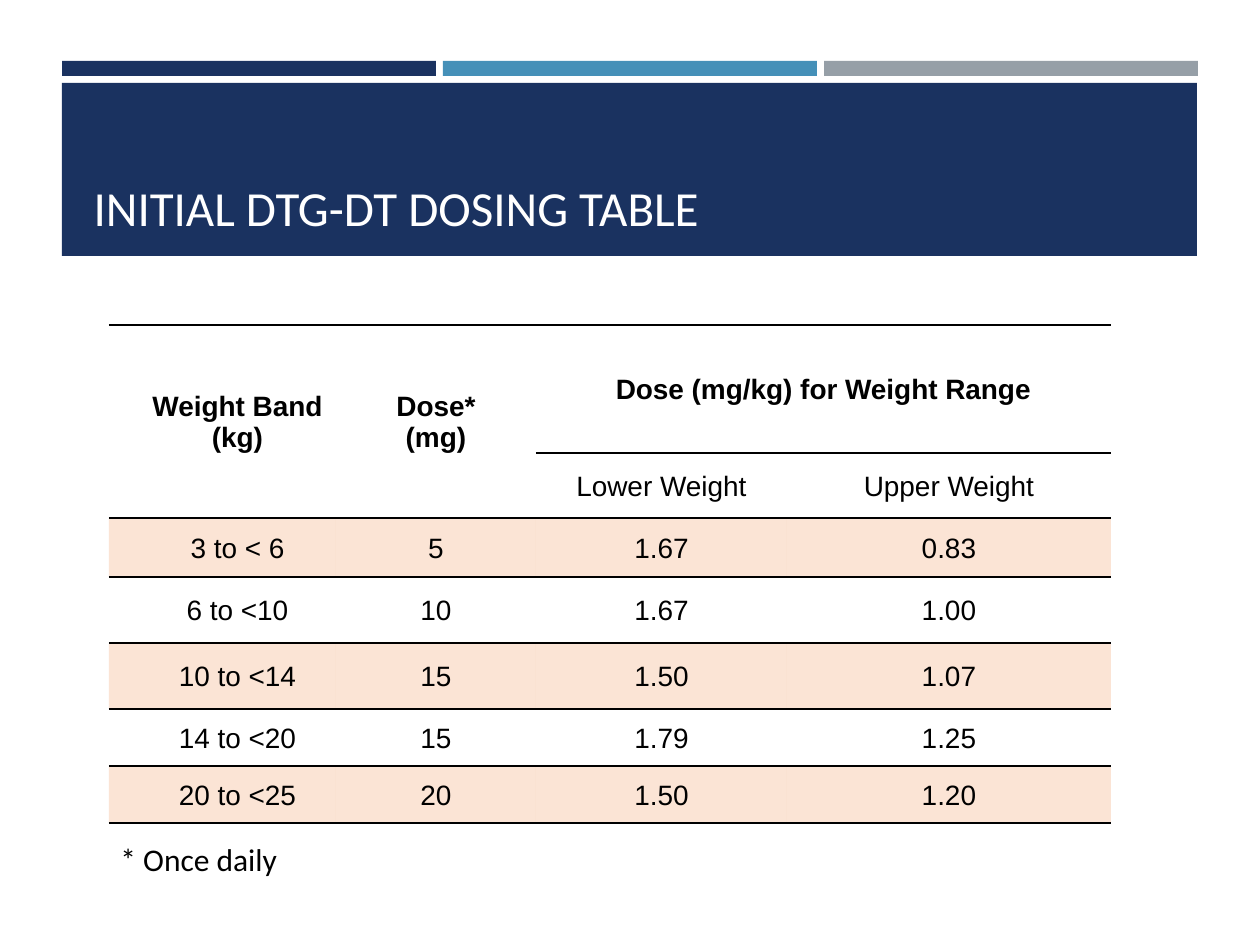
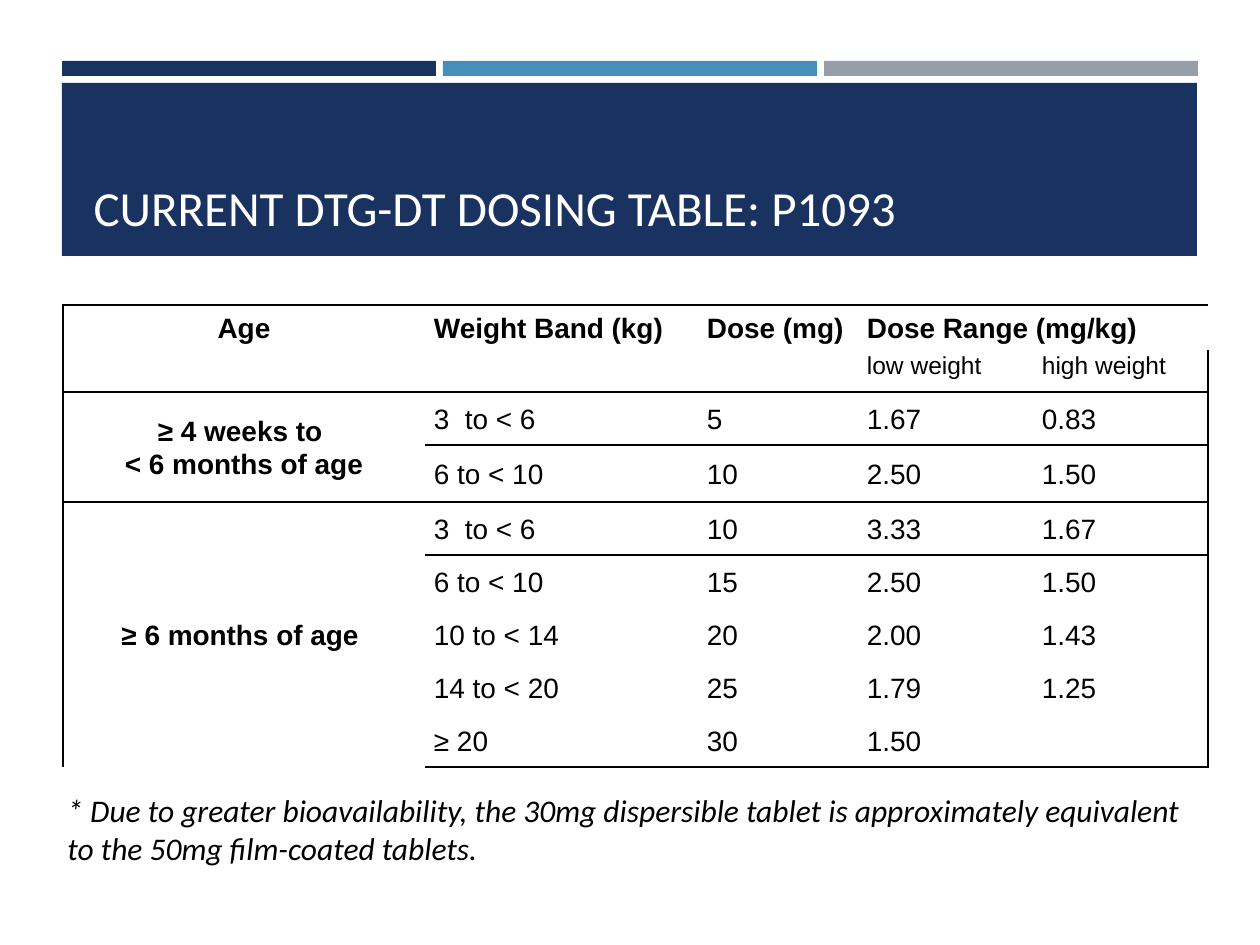
from dataclasses import dataclass

from lxml.etree import SubElement
from pptx import Presentation
from pptx.dml.color import RGBColor as Rgb
from pptx.enum.shapes import MSO_SHAPE as Preset
from pptx.enum.text import MSO_ANCHOR as Anchor, PP_ALIGN as Align
from pptx.oxml.ns import qn
from pptx.presentation import Presentation as Deck
from pptx.slide import Slide, SlideLayout
from pptx.table import Table, _Cell as Cell
from pptx.text.text import TextFrame
from pptx.util import Emu, Pt

PX = 914400 / 126
TITLE_ONLY = 5
PLAIN_TABLE_STYLE = "{2D5ABB26-0587-4C30-8999-92F81FD0307C}"


@dataclass(frozen=True)
class Theme:
    navy: str = "1A3260"
    blue: str = "4590B8"
    grey: str = "969FA7"
    white: str = "FFFFFF"
    black: str = "000000"
    peach: str = "F8CBAD"
    peach_opacity: int = 50
    heading_font: str = "Calibri"
    table_font: str = "Arial"
    title_size: int = 28
    note_size: int = 18
    table_size: int = 16
    small_size: int = 14
    rule_width: int = 1


THEME = Theme()


@dataclass(frozen=True)
class Box:
    left: int
    top: int
    width: int
    height: int

    def emu(self) -> tuple[Emu, Emu, Emu, Emu]:
        return px(self.left), px(self.top), px(self.width), px(self.height)


@dataclass(frozen=True)
class TextStyle:
    font: str
    size: int
    color: str = THEME.black
    bold: bool = False
    italic: bool = False
    align: Align = Align.LEFT
    line_spacing: float | None = None


@dataclass(frozen=True)
class Rule:
    """A horizontal line above a row, from a first column to the right edge."""
    row: int
    first_column: int = 0


@dataclass(frozen=True)
class DosingTable:
    left: int
    top: int
    columns: list[int]
    rows: list[int]
    cells: list[list[str]]
    merges: list[tuple[int, int, int, int]]
    rules: list[Rule]
    centred_columns: set[int]
    bold_columns: set[int]
    shaded_rows: set[int]
    small_rows: set[int]
    side_margin: int
    top_margin: int
    first_indent: int
    boxed: bool
    line_spacing: float | None


@dataclass(frozen=True)
class DosingSlide:
    title: str
    table: DosingTable
    note: str
    note_box: Box
    note_italic: bool


BANNER = Box(62, 83, 1135, 173)
TITLE_BOX = Box(81, 95, 1101, 148)
STRIPE = Box(62, 61, 374, 15)
STRIPE_STEP = 381

INITIAL_DOSING = DosingSlide(
    title="INITIAL DTG-DT DOSING TABLE",
    table=DosingTable(
        left=109, top=325,
        columns=[227, 200, 251, 324],
        rows=[128, 65, 59, 66, 66, 57, 57],
        cells=[
            ["Weight Band\n(kg)", "Dose*\n(mg)", "Dose (mg/kg) for Weight Range", ""],
            ["", "", "Lower Weight", "Upper Weight"],
            ["3 to < 6", "5", "1.67", "0.83"],
            ["6 to <10", "10", "1.67", "1.00"],
            ["10 to <14", "15", "1.50", "1.07"],
            ["14 to <20", "15", "1.79", "1.25"],
            ["20 to <25", "20", "1.50", "1.20"],
        ],
        merges=[(0, 0, 1, 0), (0, 1, 1, 1), (0, 2, 0, 3)],
        rules=[Rule(0), Rule(1, first_column=2)] + [Rule(row) for row in range(2, 8)],
        centred_columns={0, 1, 2, 3},
        bold_columns=set(),
        shaded_rows={2, 4, 6},
        small_rows=set(),
        side_margin=2, top_margin=2, first_indent=32,
        boxed=False,
        line_spacing=None,
    ),
    note="* Once daily",
    note_box=Box(108, 834, 399, 50),
    note_italic=False,
)

CURRENT_DOSING = DosingSlide(
    title="CURRENT DTG-DT DOSING TABLE: P1093",
    table=DosingTable(
        left=63, top=305,
        columns=[362, 273, 160, 175, 175],
        rows=[45, 42, 53, 57] + [53] * 5,
        cells=[
            ["Age", "Weight Band (kg)", "Dose (mg)", "Dose Range (mg/kg)", ""],
            ["", "", "", "low weight", "high weight"],
            ["≥ 4 weeks to \n< 6 months of age", "3  to < 6", "5", "1.67", "0.83"],
            ["", "6 to < 10", "10", "2.50", "1.50"],
            ["≥ 6 months of age ", "3  to < 6", "10", "3.33", "1.67"],
            ["", "6 to < 10", "15", "2.50", "1.50"],
            ["", "10 to < 14", "20", "2.00", "1.43"],
            ["", "14 to < 20", "25", "1.79", "1.25"],
            ["", "≥ 20", "30", "1.50", ""],
        ],
        merges=[(0, 3, 0, 4), (2, 0, 3, 0), (4, 0, 8, 0)],
        rules=[Rule(0), Rule(2), Rule(4), Rule(9)],
        centred_columns={0},
        bold_columns={0},
        shaded_rows=set(),
        small_rows={1},
        side_margin=9, top_margin=0, first_indent=9,
        boxed=True,
        line_spacing=1.07,
    ),
    note="* Due to greater bioavailability, the 30mg dispersible tablet is "
         "approximately equivalent to the 50mg film-coated tablets.",
    note_box=Box(55, 785, 1153, 89),
    note_italic=True,
)


def px(length: int) -> Emu:
    return Emu(round(length * PX))


def write_text(frame: TextFrame, text: str, style: TextStyle) -> None:
    for index, line in enumerate(text.split("\n")):
        paragraph = frame.add_paragraph() if index else frame.paragraphs[0]
        paragraph.alignment = style.align
        if style.line_spacing:
            paragraph.line_spacing = style.line_spacing
        run = paragraph.add_run()
        run.text = line
        run.font.name = style.font
        run.font.size = Pt(style.size)
        run.font.bold = style.bold
        run.font.italic = style.italic
        run.font.color.rgb = Rgb.from_string(style.color)


def add_band(slide: Slide, layout: SlideLayout, box: Box, color: str) -> None:
    """Draw a filled band and move it to the layout, behind its placeholders."""
    band = slide.shapes.add_shape(Preset.RECTANGLE, *box.emu())
    band.shadow.inherit = False
    band.fill.solid()
    band.fill.fore_color.rgb = Rgb.from_string(color)
    band.line.fill.background()
    layout.element.cSld.spTree.insert(2, band.element)


def add_shared_bands(slide: Slide, layout: SlideLayout) -> None:
    add_band(slide, layout, BANNER, THEME.navy)
    for index, color in enumerate((THEME.navy, THEME.blue, THEME.grey)):
        left = STRIPE.left + index * STRIPE_STEP
        add_band(slide, layout, Box(left, STRIPE.top, STRIPE.width, STRIPE.height), color)


def set_title(slide: Slide, text: str) -> None:
    title = slide.shapes.title
    title.left, title.top, title.width, title.height = TITLE_BOX.emu()
    title.text_frame.vertical_anchor = Anchor.BOTTOM
    write_text(title.text_frame, text,
               TextStyle(THEME.heading_font, THEME.title_size, THEME.white))


def ruled_sides(spec: DosingTable, row: int, column: int) -> list[str]:
    """Name the cell's drawn borders in the order the file format requires."""
    ruled = {rule.row for rule in spec.rules if column >= rule.first_column}
    drawn = {
        "L": spec.boxed and column == 0,
        "R": spec.boxed and column == len(spec.columns) - 1,
        "T": row in ruled,
        "B": row + 1 in ruled,
    }
    return [side for side, is_drawn in drawn.items() if is_drawn]


def add_borders(cell: Cell, sides: list[str]) -> None:
    properties = cell._tc.get_or_add_tcPr()
    for side in sides:
        line = SubElement(properties, qn(f"a:ln{side}"), w=str(Pt(THEME.rule_width)))
        fill = SubElement(line, qn("a:solidFill"))
        SubElement(fill, qn("a:srgbClr"), val=THEME.black)


def fill_cell(cell: Cell, shaded: bool) -> None:
    if not shaded:
        cell.fill.background()
        return
    cell.fill.solid()
    cell.fill.fore_color.rgb = Rgb.from_string(THEME.peach)
    color = cell._tc.tcPr.find(f"{qn('a:solidFill')}/{qn('a:srgbClr')}")
    SubElement(color, qn("a:alpha"), val=str(THEME.peach_opacity * 1000))


def format_cell(table: Table, spec: DosingTable, row: int, column: int) -> None:
    cell = table.cell(row, column)
    add_borders(cell, ruled_sides(spec, row, column))
    fill_cell(cell, row in spec.shaded_rows)
    small = row in spec.small_rows
    cell.vertical_anchor = Anchor.TOP if small else Anchor.MIDDLE
    cell.margin_left = px(spec.side_margin if column else spec.first_indent)
    cell.margin_right = px(spec.side_margin)
    cell.margin_top = px(spec.top_margin)
    cell.margin_bottom = 0
    text = spec.cells[row][column]
    if text:
        write_text(cell.text_frame, text, TextStyle(
            THEME.table_font,
            THEME.small_size if small else THEME.table_size,
            bold=row == 0 or column in spec.bold_columns,
            align=Align.CENTER if column in spec.centred_columns else Align.LEFT,
            line_spacing=spec.line_spacing,
        ))


def add_dosing_table(slide: Slide, spec: DosingTable) -> None:
    box = Box(spec.left, spec.top, sum(spec.columns), sum(spec.rows))
    frame = slide.shapes.add_table(len(spec.rows), len(spec.columns), *box.emu())
    table = frame.table
    table.first_row = table.horz_banding = False
    next(frame.element.iter(qn("a:tableStyleId"))).text = PLAIN_TABLE_STYLE
    for column, width in zip(table.columns, spec.columns):
        column.width = px(width)
    for row, height in zip(table.rows, spec.rows):
        row.height = px(height)
    for top, left, bottom, right in spec.merges:
        table.cell(top, left).merge(table.cell(bottom, right))
    for row in range(len(spec.rows)):
        for column in range(len(spec.columns)):
            format_cell(table, spec, row, column)


def add_note(slide: Slide, text: str, box: Box, italic: bool) -> None:
    frame = slide.shapes.add_textbox(*box.emu()).text_frame
    frame.word_wrap = True
    write_text(frame, text, TextStyle(THEME.heading_font, THEME.note_size, italic=italic))


def build() -> Deck:
    presentation = Presentation()
    presentation.slide_width, presentation.slide_height = px(1260), px(945)
    layout = presentation.slide_layouts[TITLE_ONLY]
    for content in (INITIAL_DOSING, CURRENT_DOSING):
        slide = presentation.slides.add_slide(layout)
        set_title(slide, content.title)
        add_dosing_table(slide, content.table)
        add_note(slide, content.note, content.note_box, content.note_italic)
    add_shared_bands(slide, layout)
    return presentation


if __name__ == "__main__":
    build().save("out.pptx")
